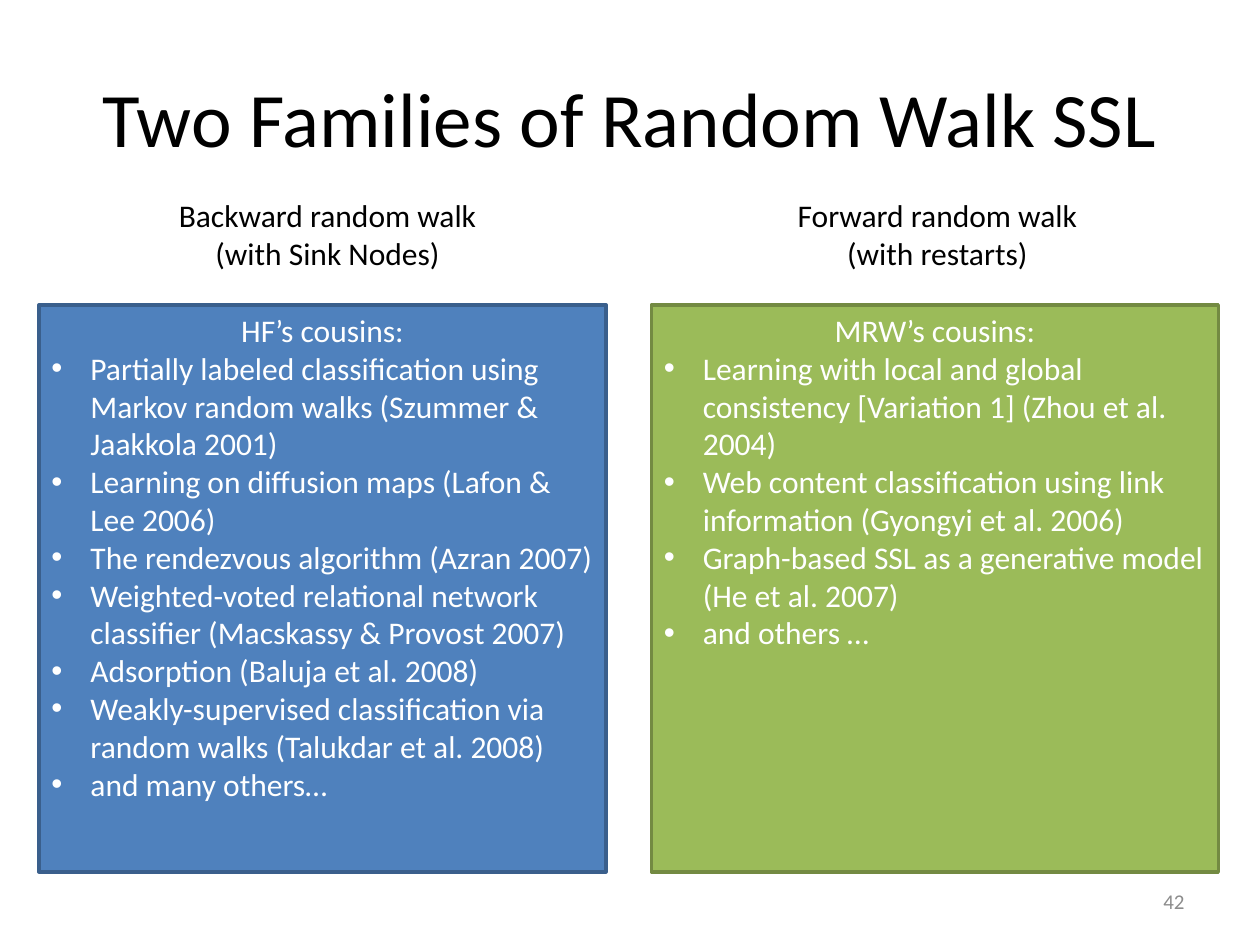
from lxml.etree import SubElement
from pptx import Presentation
from pptx.dml.color import RGBColor
from pptx.enum.shapes import MSO_SHAPE
from pptx.enum.text import MSO_ANCHOR, PP_ALIGN
from pptx.oxml.ns import qn
from pptx.util import Inches, Pt

COLORS = {"black": "000000", "white": "FFFFFF", "gray": "8C8C8C",
          "blue": "4F81BD", "blue_line": "3A5F8C",
          "green": "9BBB59", "green_line": "738A42"}
FAMILIES = [
    ("blue", 2.6, ["Backward random walk", "(with Sink Nodes)"], "HF’s cousins:", [
        "Partially labeled classification using Markov random walks (Szummer & Jaakkola 2001)",
        "Learning on diffusion maps (Lafon & Lee 2006)",
        "The rendezvous algorithm (Azran 2007)",
        "Weighted-voted relational network classifier (Macskassy & Provost 2007)",
        "Adsorption (Baluja et al. 2008)",
        "Weakly-supervised classification via random walks (Talukdar et al. 2008)",
        "and many others…"]),
    ("green", 7.44, ["Forward random walk", "(with restarts)"], "MRW’s cousins:", [
        "Learning with local and global consistency [Variation 1] (Zhou et al. 2004)",
        "Web content classification using link information (Gyongyi et al. 2006)",
        "Graph-based SSL as a generative model (He et al. 2007)",
        "and others …"]),
]
LEFT, TOP, SIDE, STEP = 0.31, 2.42, 4.5, 4.86
HEAD_W = 2.6


def write(tf, lines, size, color, align, anchor=MSO_ANCHOR.TOP):
    tf.word_wrap = True
    tf.vertical_anchor = anchor
    for i, line in enumerate(lines):
        p = tf.paragraphs[0] if i == 0 else tf.add_paragraph()
        p.alignment = align
        r = p.add_run()
        r.text = line
        r.font.size = Pt(size)
        r.font.name = "Calibri"
        r.font.color.rgb = RGBColor.from_string(COLORS[color])


def text_box(s, x, y, w, h, *style):
    sp = s.shapes.add_textbox(Inches(x), Inches(y), Inches(w), Inches(h))
    write(sp.text_frame, *style)


prs = Presentation()
prs.slide_width, prs.slide_height = Inches(10), Inches(7.5)
s = prs.slides.add_slide(prs.slide_layouts[6])

text_box(s, 0.5, 0.3, 9, 1.25, ["Two Families of Random Walk SSL"], 44, "black",
         PP_ALIGN.CENTER, MSO_ANCHOR.MIDDLE)
text_box(s, 7.17, 6.95, 2.33, 0.4, ["42"], 12, "gray",
         PP_ALIGN.RIGHT, MSO_ANCHOR.MIDDLE)

for col, (color, center, heading, label, papers) in enumerate(FAMILIES):
    text_box(s, center - HEAD_W / 2, 1.51, HEAD_W, 0.71, heading, 18, "black",
             PP_ALIGN.CENTER)
    sp = s.shapes.add_shape(MSO_SHAPE.RECTANGLE, Inches(LEFT + col * STEP),
                            Inches(TOP), Inches(SIDE), Inches(SIDE))
    sp.shadow.inherit = False
    sp.fill.solid()
    sp.fill.fore_color.rgb = RGBColor.from_string(COLORS[color])
    sp.line.color.rgb = RGBColor.from_string(COLORS[color + "_line"])
    sp.line.width = Pt(2)
    tf = sp.text_frame
    write(tf, [label, *papers], 18, "white", PP_ALIGN.LEFT)
    tf.paragraphs[0].alignment = PP_ALIGN.CENTER
    for p in tf.paragraphs[1:]:
        pPr = p._p.get_or_add_pPr()
        pPr.set("marL", str(Inches(0.31)))
        pPr.set("indent", str(-Inches(0.31)))
        SubElement(pPr, qn("a:buFont"), typeface="Arial")
        SubElement(pPr, qn("a:buChar"), char="•")

prs.save("out.pptx")
